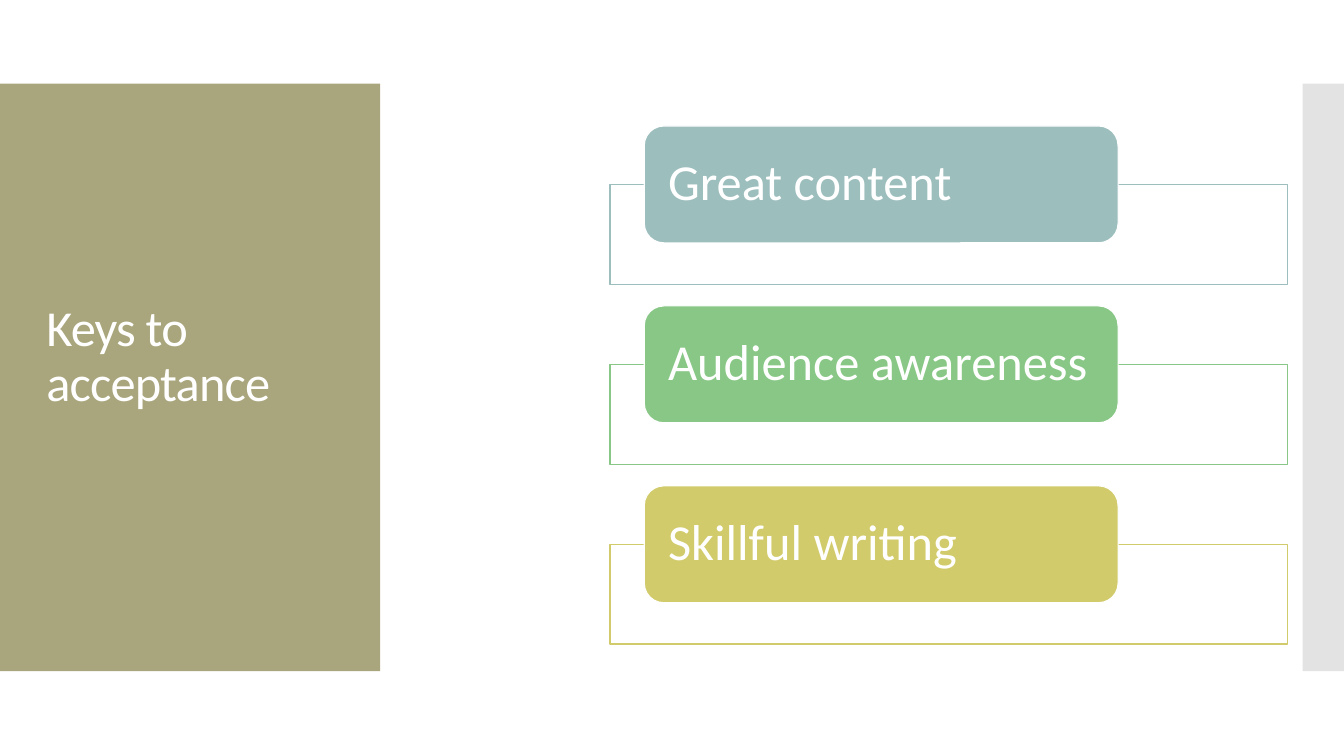
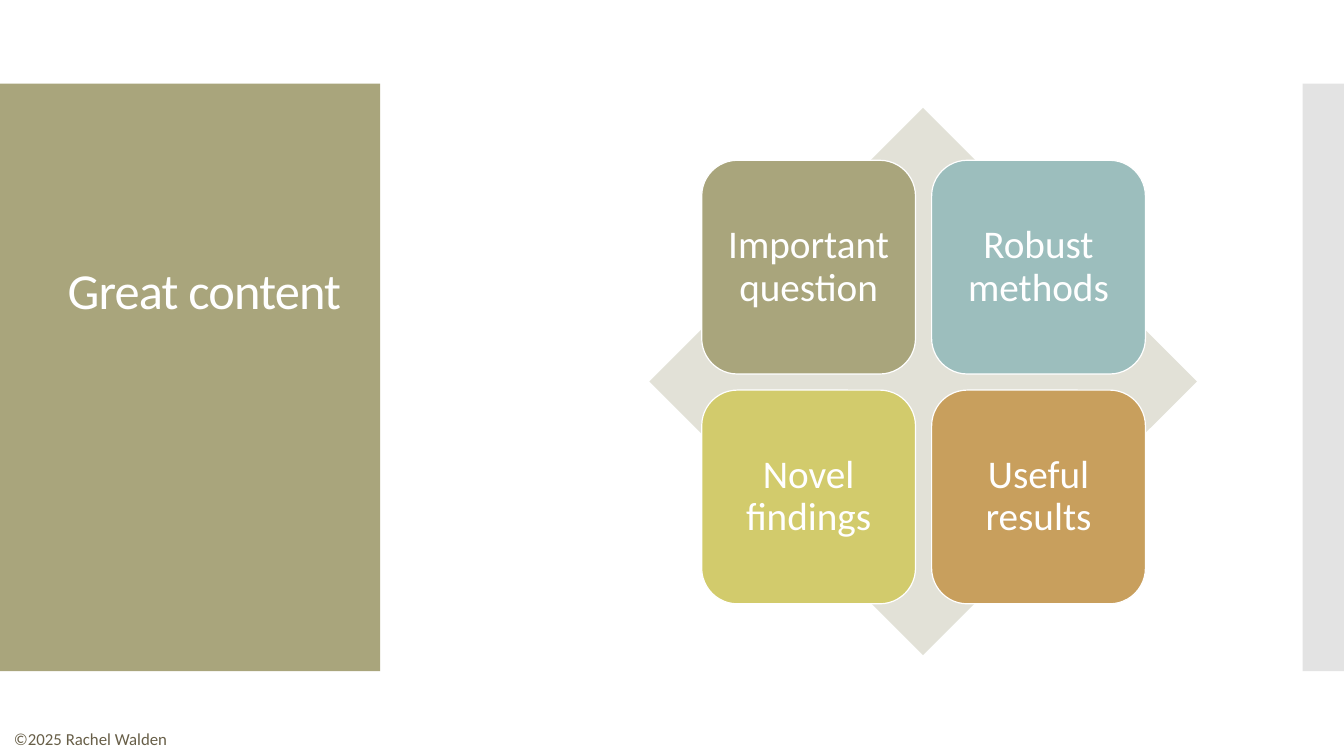
from dataclasses import dataclass
from typing import Optional

from lxml import etree
from pptx import Presentation
from pptx import util as u
from pptx.dml.color import RGBColor
from pptx.enum import shapes, text
from pptx.oxml import ns

COLORS = {
    "olive": "A9A57C",
    "teal": "9CBEBD",
    "green": "88C785",
    "yellow": "D2CB6C",
    "orange": "C89F5D",
    "pale": "E2E1D7",
    "gray": "C8C8C8",
    "white": "FFFFFF",
    "brown": "675E47",
}
FONT = "Calibri"
LINE_WIDTH = u.Pt(0.85)
LEFT, CENTER = text.PP_ALIGN.LEFT, text.PP_ALIGN.CENTER
SHAPE = shapes.MSO_SHAPE


@dataclass(frozen=True)
class Box:
    left: float
    top: float
    width: float
    height: float

    def lengths(self) -> tuple:
        return tuple(map(u.Inches, (self.left, self.top, self.width, self.height)))


@dataclass(frozen=True)
class Card:
    label: str
    color: str


BANDS = ((Box(0, 0.83, 3.77, 5.83), "olive", None),
         (Box(12.92, 0.83, 0.41, 5.83), "gray", 50))
KEYS = (Card("Great content", "teal"),
        Card("Audience awareness", "green"),
        Card("Skillful writing", "yellow"))
QUALITIES = (Card("Important question", "olive"), Card("Robust methods", "teal"),
             Card("Novel findings", "yellow"), Card("Useful results", "orange"))


def rgb(name: str) -> RGBColor:
    return RGBColor.from_string(COLORS[name])


def apply(target, values: dict) -> None:
    for name, value in values.items():
        setattr(target, name, value)


def write(shape, wording: str, size: float, color: str, align=LEFT,
          spacing: float = 0.9, **frame_format) -> None:
    frame = shape.text_frame
    frame.text = wording
    apply(frame, {"word_wrap": True,
                  "vertical_anchor": text.MSO_ANCHOR.MIDDLE, **frame_format})
    paragraph = frame.paragraphs[0]
    apply(paragraph, {"alignment": align, "line_spacing": spacing})
    for run in paragraph.runs:
        apply(run.font, {"name": FONT, "size": u.Pt(size)})
        run.font.color.rgb = rgb(color)


def add_block(slide, kind, box: Box, fill: str, line: Optional[str] = None,
              opacity: Optional[int] = None):
    """Add a flat shape; opacity is a percentage."""
    block = slide.shapes.add_shape(kind, *box.lengths())
    block.shadow.inherit = False
    block.fill.solid()
    block.fill.fore_color.rgb = rgb(fill)
    if line:
        block.line.color.rgb = rgb(line)
        block.line.width = LINE_WIDTH
    else:
        block.line.fill.background()
    if opacity is not None:
        fill_color = block.element.xpath("p:spPr/a:solidFill/a:srgbClr")[0]
        etree.SubElement(fill_color, ns.qn("a:alpha"), val=str(opacity * 1000))
    return block


def add_bands(slide) -> None:
    """Draw the side bands and hand them over to the slide's layout."""
    for box, color, opacity in BANDS:
        band = add_block(slide, SHAPE.RECTANGLE, box, color, opacity=opacity)
        slide.slide_layout.shapes.element.append(band.element)


def add_titled_slide(deck, layout, wording: str, box: Box):
    slide = deck.slides.add_slide(layout)
    title = slide.shapes.title
    apply(title, dict(zip(("left", "top", "width", "height"), box.lengths())))
    write(title, wording, 36, "white", auto_size=text.MSO_AUTO_SIZE.NONE)
    for run_format in title.element.xpath(".//a:rPr"):
        run_format.set("spc", "-60")
    return slide


def add_keys(slide) -> None:
    first_top, last_top = 1.83, 5.4
    pitch = (last_top - first_top) / (len(KEYS) - 1)
    side = u.Inches(0.18)
    for row, key in enumerate(KEYS):
        top = first_top + row * pitch
        add_block(slide, SHAPE.RECTANGLE, Box(6.05, top, 6.72, 0.99),
                  "white", key.color, 90)
        tab = add_block(slide, SHAPE.ROUNDED_RECTANGLE,
                        Box(6.39, top - 0.58, 4.7, 1.16), key.color, "white")
        write(tab, key.label, 36, "white", margin_left=side, margin_right=side,
              margin_top=0, margin_bottom=0)


def add_qualities(slide) -> None:
    add_block(slide, SHAPE.DIAMOND, Box(6.44, 1.07, 5.43, 5.43), "pale")
    side, pitch = 2.12, 2.28
    margins = {f"margin_{edge}": u.Inches(0.12)
               for edge in ("left", "top", "right", "bottom")}
    for index, quality in enumerate(QUALITIES):
        row, column = divmod(index, 2)
        box = Box(6.96 + column * pitch, 1.59 + row * pitch, side, side)
        tile = add_block(slide, SHAPE.ROUNDED_RECTANGLE, box, quality.color, "white")
        write(tile, quality.label, 28, "white", CENTER, **margins)


def add_copyright(slide) -> None:
    credit = slide.shapes.add_textbox(*Box(0.04, 7.18, 1.72, 0.3).lengths())
    write(credit, "©2025 Rachel Walden", 12, "brown", spacing=1.0, word_wrap=False,
          vertical_anchor=text.MSO_ANCHOR.TOP,
          auto_size=text.MSO_AUTO_SIZE.SHAPE_TO_FIT_TEXT)


def main() -> None:
    deck = Presentation()
    apply(deck, {"slide_width": u.Inches(13.33), "slide_height": u.Inches(7.5)})
    layout = deck.slide_layouts.get_by_name("Title Only")

    keys = add_titled_slide(deck, layout, "Keys to\vacceptance",
                            Box(0.36, 1.71, 2.79, 3.68))
    add_bands(keys)
    add_keys(keys)

    content = add_titled_slide(deck, layout, "Great content",
                               Box(0.57, 1.07, 4.41, 3.68))
    add_qualities(content)
    add_copyright(content)

    deck.save("out.pptx")


if __name__ == "__main__":
    main()
